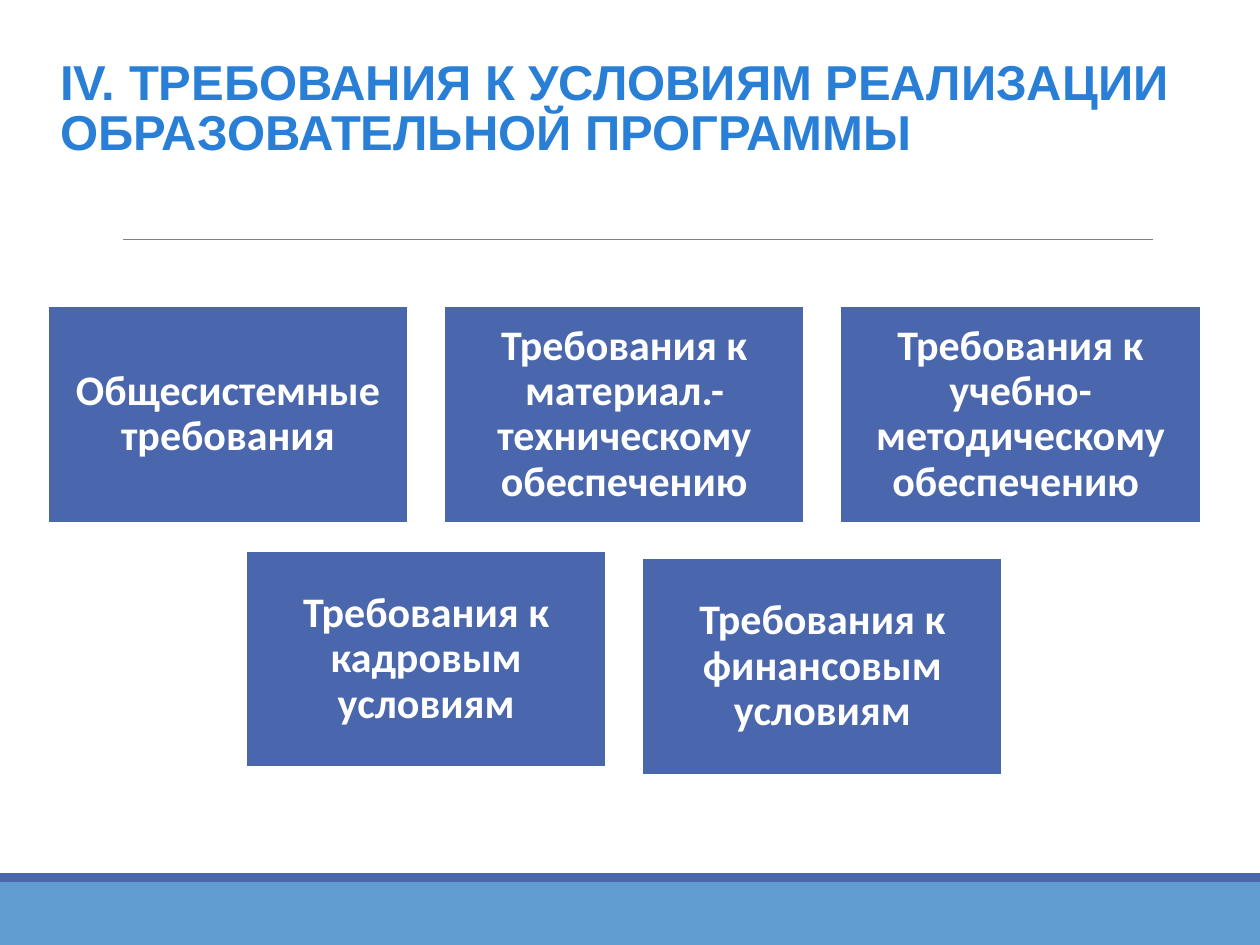
import pptx
import pptx.util
import pptx.dml.color
import pptx.enum.shapes
import pptx.enum.text
import pptx.oxml.ns
from lxml import etree

Inches, Pt = pptx.util.Inches, pptx.util.Pt
ANCHOR = pptx.enum.text.MSO_ANCHOR
ALIGN = pptx.enum.text.PP_ALIGN

COLORS = {"title": "297FD5", "box": "4A66AC", "footer": "629DD1",
          "rule": "808080", "white": "FFFFFF"}

TITLE = "IV. ТРЕБОВАНИЯ К УСЛОВИЯМ РЕАЛИЗАЦИИ ОБРАЗОВАТЕЛЬНОЙ ПРОГРАММЫ"

# Each box: text and top edge; the second row is centred under the first.
ROWS = [
    [("Общесистемные требования", 2.43),
     ("Требования к материал.-техническому обеспечению", 2.43),
     ("Требования к учебно-методическому обеспечению ", 2.43)],
    [("Требования к кадровым условиям", 4.37),
     ("Требования к финансовым условиям", 4.43)],
]
BOX_W, BOX_H, GAP = 2.86, 1.72, 0.285
GRID_LEFT = 0.38


def rgb(name):
    return pptx.dml.color.RGBColor.from_string(COLORS[name])


def add_rect(slide, left, top, width, height, color):
    s = slide.shapes.add_shape(
        pptx.enum.shapes.MSO_SHAPE.RECTANGLE,
        Inches(left), Inches(top), Inches(width), Inches(height))
    s.shadow.inherit = False
    s.fill.solid()
    s.fill.fore_color.rgb = rgb(color)
    s.line.fill.background()
    return s


def set_text(s, text, font, size, color, anchor, align, spacing):
    tf = s.text_frame
    tf.word_wrap = True
    tf.vertical_anchor = anchor
    tf.text = text
    p = tf.paragraphs[0]
    p.alignment = align
    p.line_spacing = spacing
    f = p.runs[0].font
    f.name, f.size, f.bold = font, Pt(size), True
    f.color.rgb = rgb(color)


def add_rule(slide):
    c = slide.shapes.add_connector(
        pptx.enum.shapes.MSO_CONNECTOR.STRAIGHT,
        Inches(0.98), Inches(1.9), Inches(9.15), Inches(1.9))
    c.line.color.rgb = rgb("rule")
    c.line.width = Pt(0.5)
    etree.SubElement(c._element.spPr, pptx.oxml.ns.qn("a:effectLst"))


def add_box(slide, text, left, top):
    s = add_rect(slide, left, top, BOX_W, BOX_H, "box")
    s.line.color.rgb = rgb("white")
    s.line.width = Pt(1.25)
    tf = s.text_frame
    tf.margin_left = tf.margin_right = Inches(0.1)
    tf.margin_top = tf.margin_bottom = Inches(0.1)
    set_text(s, text, "Calibri", 24, "white", ANCHOR.MIDDLE, ALIGN.CENTER, 0.9)


def main():
    prs = pptx.Presentation()
    prs.slide_width, prs.slide_height = Inches(10), Inches(7.5)
    slide = prs.slides.add_slide(prs.slide_layouts[6])

    add_rect(slide, 0, 7, 10, 0.5, "footer")
    add_rect(slide, 0, 6.93, 10, 0.07, "box")
    add_rule(slide)

    title = slide.shapes.add_textbox(
        Inches(0.38), Inches(0.31), Inches(9.32), Inches(1.01))
    set_text(title, TITLE, "Arial", 28, "title", ANCHOR.BOTTOM, ALIGN.LEFT, 0.85)

    pitch = BOX_W + GAP
    for row in ROWS:
        row_left = GRID_LEFT + (len(ROWS[0]) - len(row)) * pitch / 2
        for i, (text, top) in enumerate(row):
            add_box(slide, text, row_left + i * pitch, top)

    prs.save("out.pptx")


if __name__ == "__main__":
    main()
